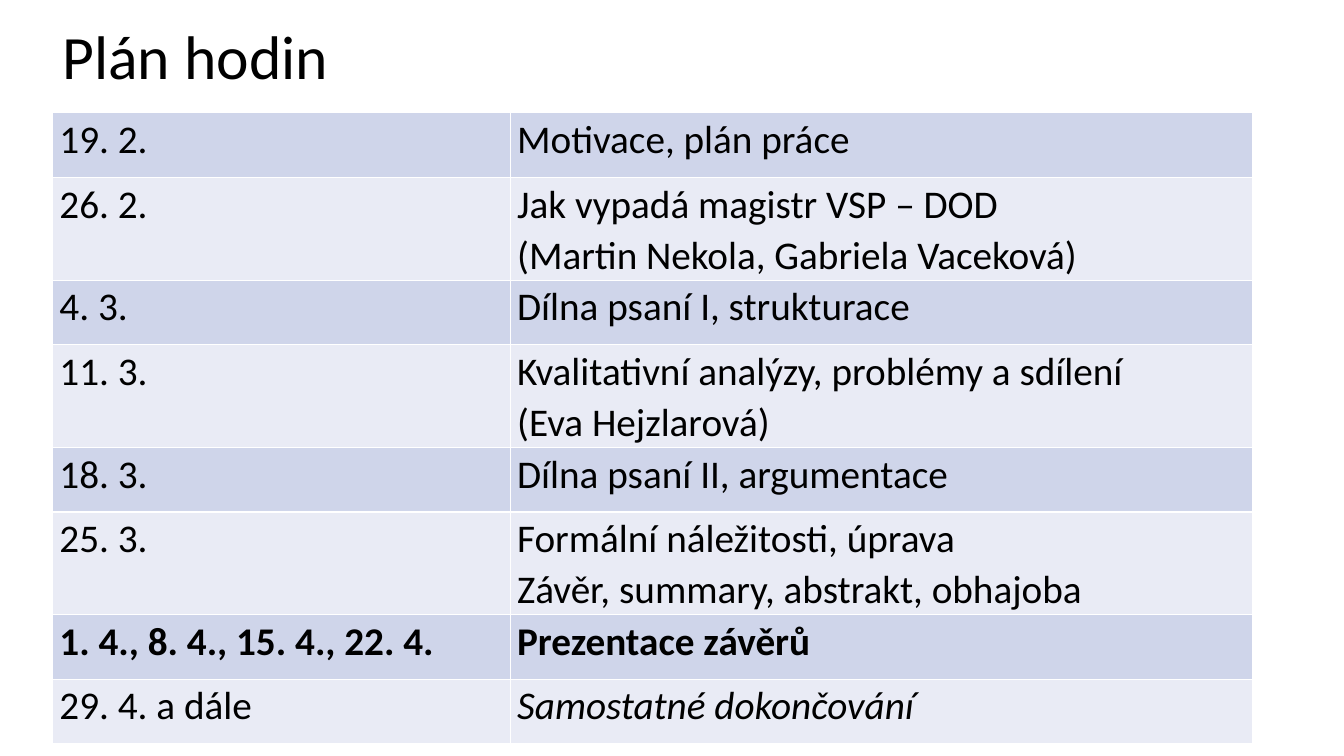
from lxml.etree import SubElement
from pptx import Presentation
from pptx.dml.color import RGBColor
from pptx.enum.text import MSO_ANCHOR, PP_ALIGN
from pptx.oxml.ns import qn
from pptx.util import Inches, Pt

BLACK = RGBColor(0x00, 0x00, 0x00)
WHITE = RGBColor(0xFF, 0xFF, 0xFF)
BAND_DARK = RGBColor(0xCF, 0xD5, 0xEA)
BAND_LIGHT = RGBColor(0xE9, 0xEB, 0xF5)
FONT = "Calibri"
COLUMN_WIDTHS = (4.54, 7.36)
ROW_HEIGHTS = {1: 0.64, 2: 1.02}
LESSONS = [
    ("19. 2.", ["Motivace, plán práce"], {}, {}),
    ("26. 2.", ["Jak vypadá magistr VSP – DOD",
                "(Martin Nekola, Gabriela Vaceková)"], {}, {}),
    ("4. 3.", ["Dílna psaní I, strukturace"], {}, {}),
    ("11. 3.", ["Kvalitativní analýzy, problémy a sdílení",
                "(Eva Hejzlarová)"], {}, {}),
    ("18. 3.", ["Dílna psaní II, argumentace"], {}, {}),
    ("25. 3.", ["Formální náležitosti, úprava",
                "Závěr, summary, abstrakt, obhajoba"], {}, {}),
    ("1. 4., 8. 4., 15. 4., 22. 4.", ["Prezentace závěrů"],
     {"bold": True}, {"bold": True}),
    ("29. 4. a dále", ["Samostatné dokončování"], {}, {"italic": True}),
]


def write_text(text_frame, lines, size=28, spacing=1.07, bold=False, italic=False):
    """Write one formatted paragraph per line."""
    for index, line in enumerate(lines):
        paragraph = text_frame.paragraphs[0] if index == 0 else text_frame.add_paragraph()
        paragraph.alignment = PP_ALIGN.LEFT
        paragraph.line_spacing = spacing
        paragraph.space_before = paragraph.space_after = Pt(0)
        run = paragraph.add_run()
        run.text = line
        run.font.name = FONT
        run.font.size = Pt(size)
        run.font.bold = bold
        run.font.italic = italic
        run.font.color.rgb = BLACK


def set_borders(cell, color, width):
    """Draw a solid line on all four sides of a cell."""
    properties = cell._tc.get_or_add_tcPr()
    for position, side in enumerate(("a:lnL", "a:lnR", "a:lnT", "a:lnB")):
        line = SubElement(properties, qn(side), w=str(Pt(width)))
        fill = SubElement(line, qn("a:solidFill"))
        SubElement(fill, qn("a:srgbClr"), val=str(color))
        properties.insert(position, line)


def fill_cell(cell, lines, color, **text_format):
    """Fill a table cell with text, background and borders."""
    cell.margin_left = cell.margin_right = Inches(0.07)
    cell.margin_top = cell.margin_bottom = 0
    cell.vertical_anchor = MSO_ANCHOR.TOP
    cell.fill.solid()
    cell.fill.fore_color.rgb = color
    set_borders(cell, WHITE, 1)
    write_text(cell.text_frame, lines, **text_format)


def add_title(slide, text):
    """Place and format the title placeholder."""
    title = slide.shapes.title
    title.left, title.top = Inches(0.52), Inches(0)
    title.width, title.height = Inches(11.5), Inches(1.19)
    title.text_frame.vertical_anchor = MSO_ANCHOR.MIDDLE
    title.text_frame.word_wrap = True
    write_text(title.text_frame, [text], size=44, spacing=0.9)


def add_schedule(slide):
    """Add the table of lesson dates and topics."""
    heights = [ROW_HEIGHTS[len(topics)] for _, topics, _, _ in LESSONS]
    frame = slide.shapes.add_table(
        len(LESSONS), len(COLUMN_WIDTHS), Inches(0.52), Inches(1.12),
        Inches(sum(COLUMN_WIDTHS)), Inches(sum(heights)))
    table = frame.table
    table.first_row = False
    for column, width in zip(table.columns, COLUMN_WIDTHS):
        column.width = Inches(width)
    for index, (date, topics, date_format, topic_format) in enumerate(LESSONS):
        table.rows[index].height = Inches(heights[index])
        color = BAND_LIGHT if index % 2 else BAND_DARK
        fill_cell(table.cell(index, 0), [date], color, **date_format)
        fill_cell(table.cell(index, 1), topics, color, **topic_format)


def main():
    """Build the lesson plan slide."""
    presentation = Presentation()
    presentation.slide_width = Inches(13.33)
    presentation.slide_height = Inches(7.5)
    slide = presentation.slides.add_slide(presentation.slide_layouts[5])
    add_title(slide, "Plán hodin")
    add_schedule(slide)
    presentation.save("out.pptx")


if __name__ == "__main__":
    main()
